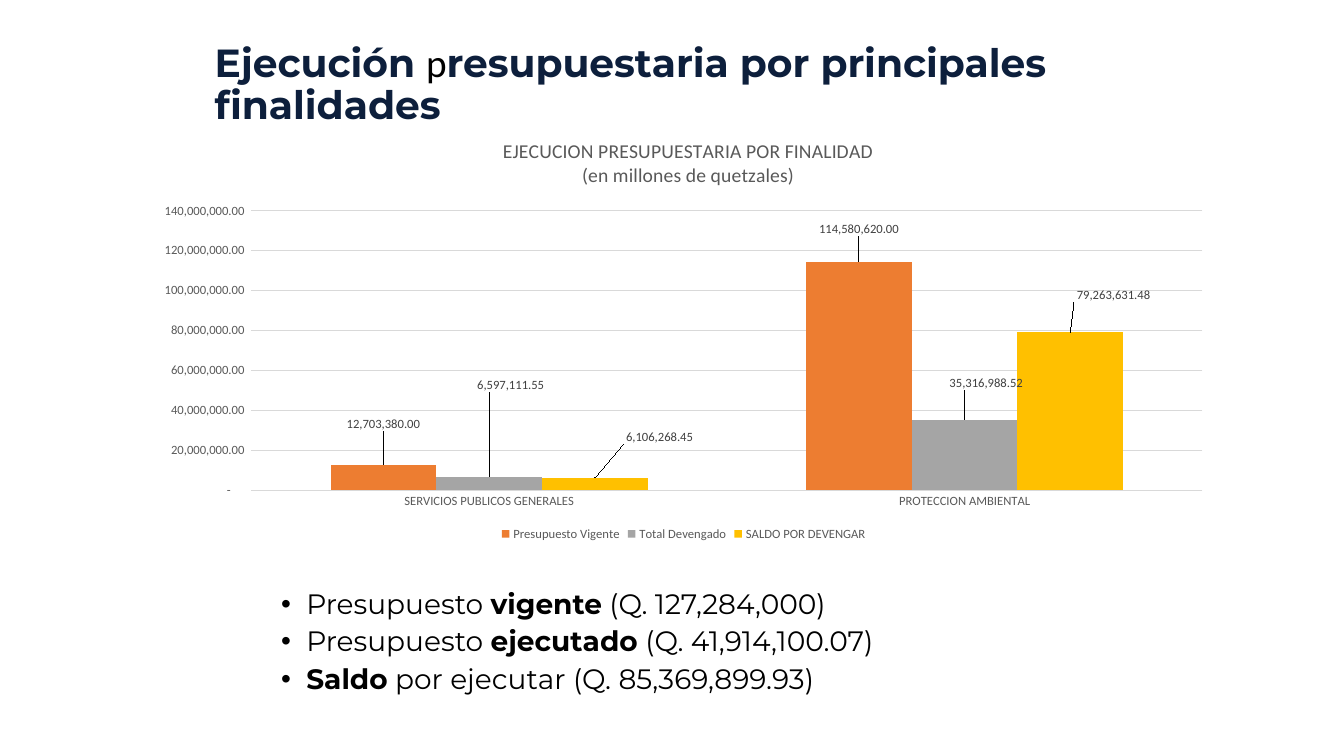
from lxml.etree import SubElement
from pptx import Presentation
from pptx.chart.data import CategoryChartData
from pptx.dml.color import RGBColor
from pptx.enum.chart import XL_CHART_TYPE, XL_LABEL_POSITION, XL_LEGEND_POSITION, XL_TICK_MARK
from pptx.enum.text import MSO_ANCHOR
from pptx.oxml import parse_xml
from pptx.oxml.ns import nsdecls, qn
from pptx.util import Inches, Pt

NAVY = RGBColor(0x0D, 0x1F, 0x3C)
BLACK = RGBColor(0, 0, 0)
DARK_GRAY = RGBColor(0x40, 0x40, 0x40)
GRAY = RGBColor(0x59, 0x59, 0x59)
LIGHT_GRAY = RGBColor(0xD9, 0xD9, 0xD9)
ORANGE = RGBColor(0xED, 0x7D, 0x31)
SILVER = RGBColor(0xA5, 0xA5, 0xA5)
GOLD = RGBColor(0xFF, 0xC0, 0x00)

NUMBER_FORMAT = '_(* #,##0.00_);_(* \\(#,##0.00\\);_(* "-"??_);_(@_)'
NO_LEADER_LINES = (
    f'<c:extLst {nsdecls("c")}><c:ext uri="{{CE6537A1-D6FC-4f65-9D91-7224C49458BB}}" '
    'xmlns:c15="http://schemas.microsoft.com/office/drawing/2012/chart">'
    '<c15:showLeaderLines val="0"/></c:ext></c:extLst>'
)
CATEGORIES = ["SERVICIOS PUBLICOS GENERALES", "PROTECCION AMBIENTAL"]
SERIES = [
    ("Presupuesto Vigente", (12703380, 114580620), ORANGE, [(0, -0.07), (0, -0.05)]),
    ("Total Devengado", (6597111.55, 35316988.52), SILVER, [(0.02, -0.19), (0.02, -0.06)]),
    ("SALDO POR DEVENGAR", (6106268.45, 79263631.48), GOLD, [(0.06, -0.07), (0.04, -0.06)]),
]
CHART_TITLE = ["EJECUCION PRESUPUESTARIA POR FINALIDAD", "(en millones de quetzales)"]
BULLETS = [
    [("Presupuesto ", False), ("vigente", True), (" (Q. 127,284,000)", False)],
    [("Presupuesto ", False), ("ejecutado", True), (" (Q. 41,914,100.07)", False)],
    [("Saldo", True), (" por ejecutar (Q. 85,369,899.93)", False)],
]


def style_font(font, name, size, color, bold=False):
    font.name = name
    font.size = Pt(size)
    font.bold = bold
    font.color.rgb = color


def add_run(paragraph, text, name, size, color, bold=False):
    run = paragraph.add_run()
    run.text = text
    style_font(run.font, name, size, color, bold)


def add_text_frame(slide, left, top, width, height):
    box = slide.shapes.add_textbox(Inches(left), Inches(top), Inches(width), Inches(height))
    box.text_frame.word_wrap = True
    return box.text_frame


def set_layout(parent, index, **values):
    for old in parent.findall(qn("c:layout")):
        parent.remove(old)
    layout = parse_xml(f"<c:layout {nsdecls('c')}><c:manualLayout/></c:layout>")
    for tag, value in values.items():
        SubElement(layout[0], qn(f"c:{tag}")).set("val", str(value))
    parent.insert(index, layout)


def add_title(slide, left, top, width, height):
    frame = add_text_frame(slide, left, top, width, height)
    frame.vertical_anchor = MSO_ANCHOR.MIDDLE
    paragraph = frame.paragraphs[0]
    paragraph.line_spacing = 0.9
    add_run(paragraph, "Ejecución ", "Montserrat", 28, NAVY, True)
    add_run(paragraph, "p", "Calibri", 28, BLACK)
    add_run(paragraph, "resupuestaria por principales finalidades", "Montserrat", 28, NAVY, True)


def style_chart_title(chart):
    frame = chart.chart_title.text_frame
    for index, line in enumerate(CHART_TITLE):
        paragraph = frame.add_paragraph() if index else frame.paragraphs[0]
        add_run(paragraph, line, "Calibri", 14, GRAY)
    chart.chart_title.include_in_layout = False
    set_layout(chart.chart_title._element, 1, xMode="edge", yMode="edge", x=0.33, y=0.03)


def style_axes(chart):
    for axis in (chart.category_axis, chart.value_axis):
        axis.major_tick_mark = axis.minor_tick_mark = XL_TICK_MARK.NONE
        axis.format.line.fill.background()
        style_font(axis.tick_labels.font, "Calibri", 9, GRAY)
    value_axis = chart.value_axis
    value_axis.minimum_scale = 0
    value_axis.maximum_scale = 140000000
    value_axis.major_unit = 20000000
    value_axis.tick_labels.number_format = NUMBER_FORMAT
    value_axis.tick_labels.number_format_is_linked = False
    grid_line = value_axis.major_gridlines.format.line
    grid_line.color.rgb = LIGHT_GRAY
    grid_line.width = Pt(0.75)


def style_series(series, color, offsets):
    series.format.fill.solid()
    series.format.fill.fore_color.rgb = color
    labels = series.data_labels
    labels.show_value = True
    labels.number_format = NUMBER_FORMAT
    labels.number_format_is_linked = False
    labels.position = XL_LABEL_POSITION.OUTSIDE_END
    style_font(labels.font, "Calibri", 9, DARK_GRAY)
    for index in range(len(offsets)):
        label = series.points[index].data_label
        style_font(label.font, "Calibri", 9, DARK_GRAY)
        label.position = XL_LABEL_POSITION.OUTSIDE_END
    for element, (x, y) in zip(series._element.iter(qn("c:dLbl")), offsets):
        set_layout(element, 1, x=x, y=y)
    series._element.find(qn("c:dLbls")).append(parse_xml(NO_LEADER_LINES))


def add_budget_chart(slide, left, top, width, height):
    data = CategoryChartData(number_format=NUMBER_FORMAT)
    data.categories = CATEGORIES
    for name, values, _, _ in SERIES:
        data.add_series(name, values)
    chart = slide.shapes.add_chart(
        XL_CHART_TYPE.COLUMN_CLUSTERED,
        Inches(left), Inches(top), Inches(width), Inches(height), data,
    ).chart
    style_font(chart.font, "Calibri", 10, BLACK)
    style_chart_title(chart)
    style_axes(chart)
    chart.has_legend = True
    chart.legend.position = XL_LEGEND_POSITION.BOTTOM
    chart.legend.include_in_layout = False
    style_font(chart.legend.font, "Calibri", 9, GRAY)
    plot = chart.plots[0]
    plot.gap_width = 150
    plot.overlap = 0
    plot.vary_by_categories = False
    for series, (_, _, color, offsets) in zip(plot.series, SERIES):
        style_series(series, color, offsets)
    plot_area = chart._chartSpace.find(f".//{qn('c:plotArea')}")
    set_layout(plot_area, 0, layoutTarget="inner", xMode="edge", yMode="edge",
               x=0.1, y=0.21, w=0.88, h=0.66)


def add_bullets(slide, left, top, width, height):
    frame = add_text_frame(slide, left, top, width, height)
    for index, runs in enumerate(BULLETS):
        paragraph = frame.add_paragraph() if index else frame.paragraphs[0]
        paragraph.level = 1
        paragraph.line_spacing = 0.9
        paragraph.space_before = Pt(5)
        properties = paragraph._p.get_or_add_pPr()
        properties.set("marL", str(Inches(0.75)))
        properties.set("indent", str(-Inches(0.25)))
        SubElement(properties, qn("a:buFont")).set("typeface", "Arial")
        SubElement(properties, qn("a:buChar")).set("char", "•")
        for text, bold in runs:
            add_run(paragraph, text, "Montserrat", 20, BLACK, bold)


def main():
    presentation = Presentation()
    presentation.slide_width = Inches(13.33)
    presentation.slide_height = Inches(7.5)
    slide = presentation.slides.add_slide(presentation.slide_layouts[6])
    add_title(slide, 2.03, 0.51, 9.57, 0.68)
    add_bullets(slide, 2.19, 5.81, 8.33, 1.27)
    add_budget_chart(slide, 1.42, 1.21, 10.72, 4.2)
    presentation.save("out.pptx")


if __name__ == "__main__":
    main()
